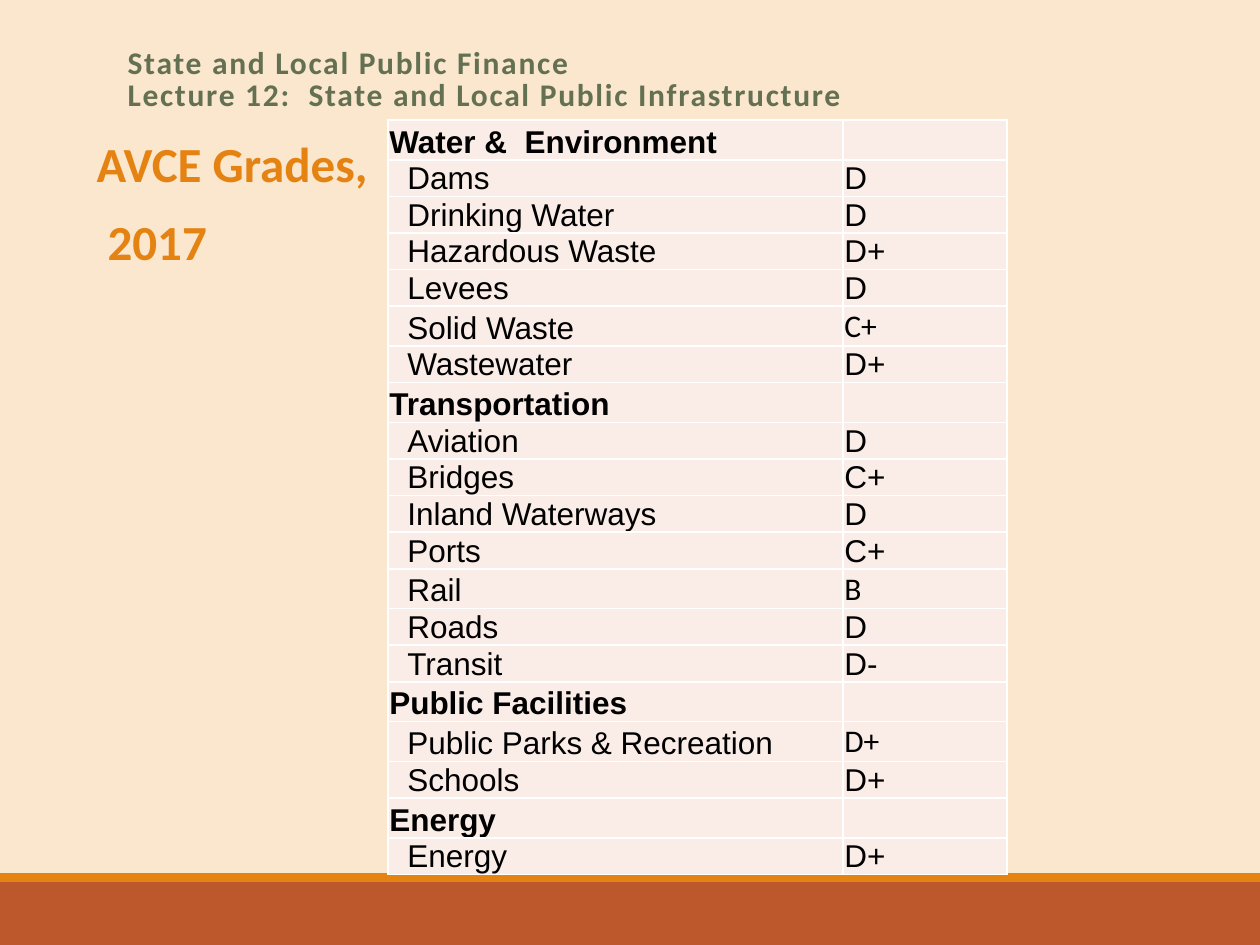
import pptx
import pptx.util
import pptx.dml.color
import pptx.enum.shapes
import pptx.enum.text
import pptx.oxml
import pptx.oxml.ns

RGB = pptx.dml.color.RGBColor
CREAM = RGB(0xFB, 0xE6, 0xCE)
RUST = RGB(0xBD, 0x58, 0x2C)
ORANGE = RGB(0xE4, 0x83, 0x12)
GREEN = RGB(0x63, 0x70, 0x52)
PINK = RGB(0xFA, 0xED, 0xE7)
BLACK = RGB(0, 0, 0)
WHITE = RGB(0xFF, 0xFF, 0xFF)

WIDE, HIGH = 1260, 945
INSET = pptx.util.Pt(0.75)
ANCHOR = pptx.enum.text.MSO_ANCHOR

# Group heading, then its items and grades
GROUPS = [
    ("Water &  Environment", [
        ("Dams", "D"), ("Drinking Water", "D"), ("Hazardous Waste", "D+"),
        ("Levees", "D"), ("Solid Waste", "C+"), ("Wastewater", "D+")]),
    ("Transportation", [
        ("Aviation", "D"), ("Bridges", "C+"), ("Inland Waterways", "D"),
        ("Ports", "C+"), ("Rail", "B"), ("Roads", "D"), ("Transit", "D-")]),
    ("Public Facilities", [
        ("Public Parks & Recreation", "D+"), ("Schools", "D+")]),
    ("Energy", [("Energy", "D+")]),
]
# Items whose grade is set in Calibri
ODD = {"Solid Waste", "Rail", "Public Parks & Recreation"}


def px(num):
    return pptx.util.Emu(round(num * 914400 / 126))


def write(para, text, size=18, font="Arial", color=BLACK, bold=False,
          track=0, line=None, before=None, after=None):
    para.text = text
    para.line_spacing = line
    para.space_before = before
    para.space_after = after
    para.alignment = pptx.enum.text.PP_ALIGN.LEFT
    for run in para.runs:
        run.font.size = pptx.util.Pt(size)
        run.font.name = font
        run.font.bold = bold
        run.font.color.rgb = color
        if track:
            run.font._element.set("spc", str(track * 100))


def place(shape, left, top, width, height, anchor):
    shape.left, shape.top = px(left), px(top)
    shape.width, shape.height = px(width), px(height)
    frame = shape.text_frame
    frame.word_wrap = True
    frame.auto_size = pptx.enum.text.MSO_AUTO_SIZE.NONE
    frame.vertical_anchor = anchor
    return frame


def add_bar(slide, top, height, color):
    bar = slide.shapes.add_shape(pptx.enum.shapes.MSO_SHAPE.RECTANGLE,
                                 0, px(top), px(WIDE), px(height))
    bar.shadow.inherit = False
    bar.fill.solid()
    bar.fill.fore_color.rgb = color
    bar.line.fill.background()


def add_line(para, text):
    write(para, text, size=28, font="Calibri", color=ORANGE, bold=True, line=0.9,
          before=pptx.util.Pt(12), after=pptx.util.Pt(2))
    props = para._p.get_or_add_pPr()
    props.set("marL", str(px(12)))
    props.set("indent", str(-px(12)))
    props.append(pptx.oxml.parse_xml(
        f"<a:buNone {pptx.oxml.ns.nsdecls('a')}/>"))


def edge(cell):
    props = cell._tc.get_or_add_tcPr()
    for side in "LRTB":
        props.append(pptx.oxml.parse_xml(
            f'<a:ln{side} {pptx.oxml.ns.nsdecls("a")} w="12700"><a:solidFill>'
            f'<a:srgbClr val="{WHITE}"/></a:solidFill></a:ln{side}>'))


def fill_cell(cell, text, indent=0, **style):
    edge(cell)
    cell.fill.solid()
    cell.fill.fore_color.rgb = PINK
    cell.vertical_anchor = ANCHOR.BOTTOM
    cell.margin_left = INSET + px(indent)
    cell.margin_right = cell.margin_top = INSET
    cell.margin_bottom = 0
    if text:
        write(cell.text_frame.paragraphs[0], text, **style)


def add_grades(slide):
    count = sum(1 + len(items) for _, items in GROUPS)
    table = slide.shapes.add_table(count, 2, px(388), px(120),
                                   px(619), px(33 * count)).table
    table.first_row = table.horz_banding = False
    for col, width in zip(table.columns, (455, 164)):
        col.width = px(width)
    rows = iter(table.rows)
    for head, items in GROUPS:
        name, grade = next(rows).cells
        fill_cell(name, head, bold=True)
        fill_cell(grade, "")
        for item, mark in items:
            name, grade = next(rows).cells
            fill_cell(name, item, indent=18)
            fill_cell(grade, mark, font="Calibri" if item in ODD else "Arial")


def main():
    deck = pptx.Presentation()
    deck.slide_width, deck.slide_height = px(WIDE), px(HIGH)
    slide = deck.slides.add_slide(deck.slide_layouts[1])
    slide.background.fill.solid()
    slide.background.fill.fore_color.rgb = CREAM

    # Footer bars
    add_bar(slide, 882, 63, RUST)
    add_bar(slide, 873, 9, ORANGE)

    # Lecture title
    title, body = slide.placeholders
    frame = place(title, 115, 40, 1040, 82, ANCHOR.MIDDLE)
    write(frame.paragraphs[0], "State and Local Public Finance\n"
          "Lecture 12:  State and Local Public Infrastructure",
          font="Calibri", color=GREEN, bold=True, track=1, line=0.85)

    # Grade table
    add_grades(slide)

    # Side heading
    frame = place(body, 84, 134, 1134, 262, ANCHOR.TOP)
    add_line(frame.paragraphs[0], "AVCE Grades,")
    add_line(frame.add_paragraph(), " 2017")

    deck.save("out.pptx")


if __name__ == "__main__":
    main()
